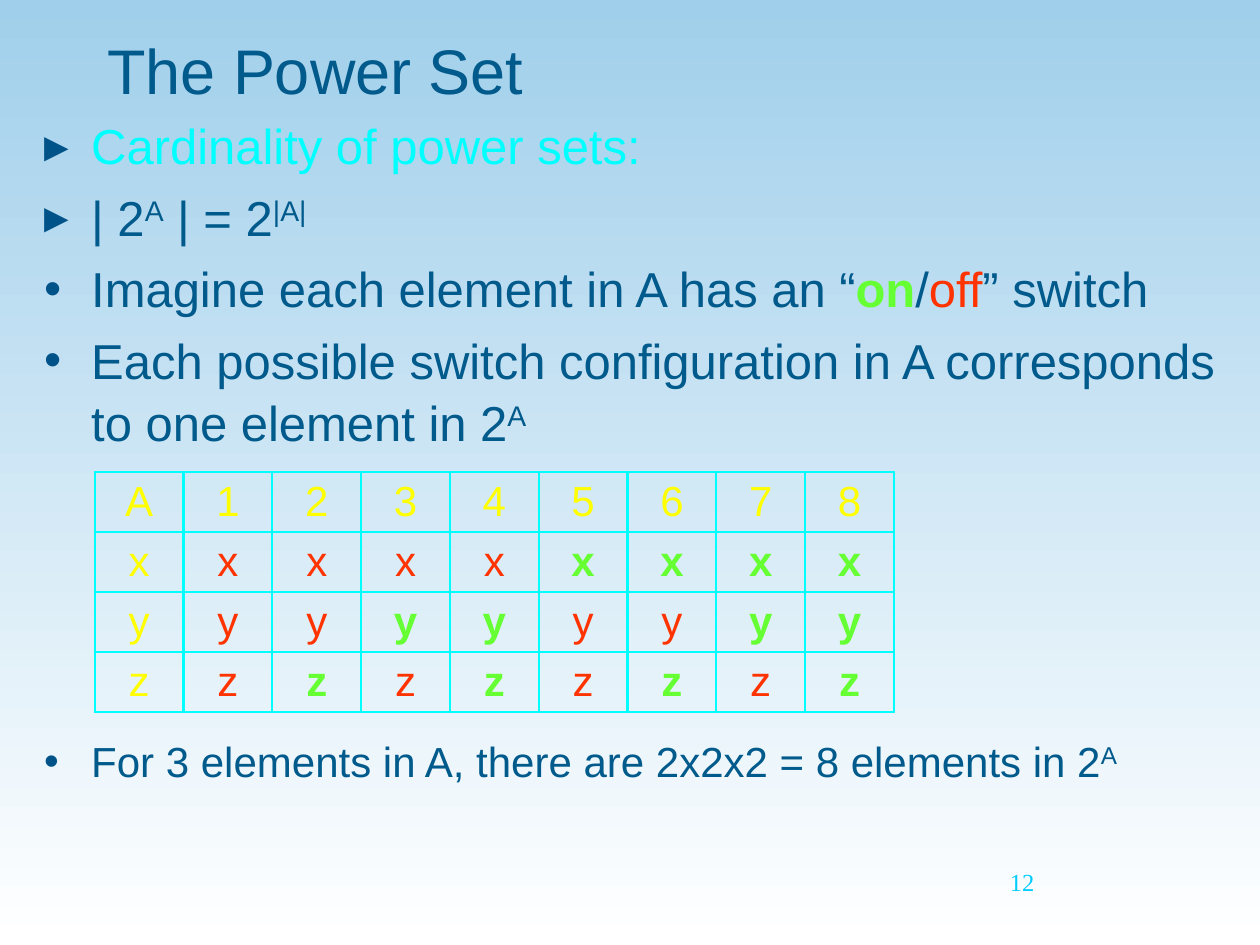
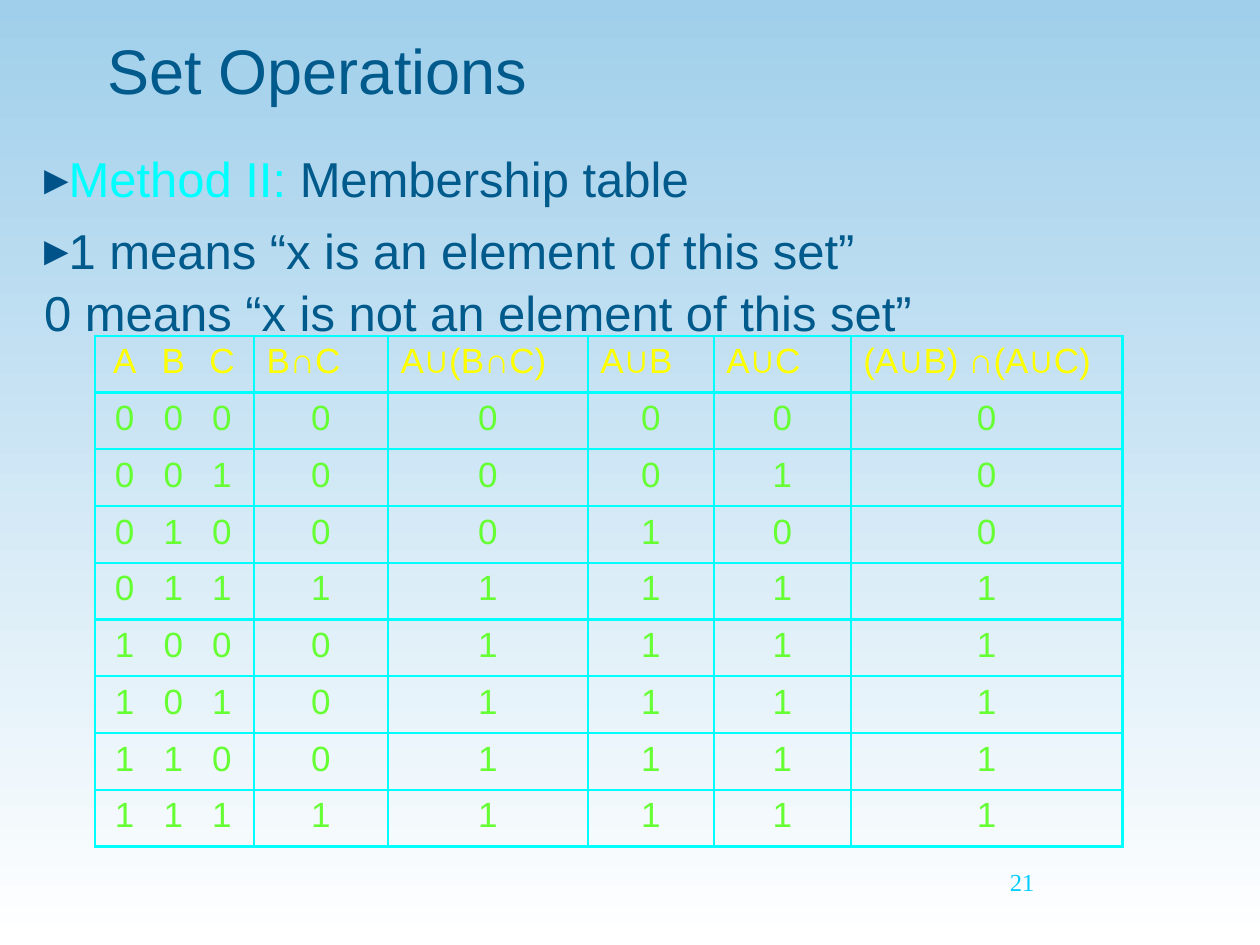
import itertools

import pptx
import pptx.dml.color
import pptx.enum.text
import pptx.oxml
import pptx.oxml.ns
import pptx.util
from pptx.util import Cm, Pt

COLORS = {"sky": "A0CFEB", "white": "FFFFFF", "text": "005A8B", "bullet": "005389",
          "cyan": "00FFFF", "number": "00CCFF", "yellow": "FFFF00",
          "on": "66FF33", "off": "FF3300"}
BODY_FONT, NUMBER_FONT = "Arial", "Times New Roman"
LEFT, MIDDLE, TOP = (pptx.enum.text.PP_ALIGN.LEFT, pptx.enum.text.MSO_ANCHOR.MIDDLE,
                     pptx.enum.text.MSO_ANCHOR.TOP)
CENTER = pptx.enum.text.PP_ALIGN.CENTER

# Content: a paragraph is (bullet, parts); a part is (text, style)
POWER_SET = [
    ("▸", [("Cardinality of power sets:", "cyan")]),
    ("▸", [("| 2", "text"), ("A", "super"), (" | = 2", "text"), ("|A|", "super")]),
    ("•", [("Imagine each element in A has an “", "text"), ("on", "on"),
           ("/", "text"), ("off", "off"), ("” switch", "text")]),
    ("•", [("Each possible switch configuration in A corresponds to one element in 2",
            "text"), ("A", "super")]),
]
POWER_SET_SIZE = [
    ("•", [("For 3 elements in A, there are 2x2x2 = 8 elements in 2", "text"),
           ("A", "super")]),
]
METHOD = [
    ("▸", [("Method II: ", "cyan"), ("Membership table", "text")]),
    ("▸", [("1 means “x is an element of this set”", "text"), ("\n", "text"),
           ("0 means “x is not an element of this set”", "text")]),
]
ELEMENTS = "xyz"
MEMBERSHIP_HEADS = ["\tA\tB\tC", "B∩C", "A∪(B∩C)", "A∪B", "A∪C", "(A∪B) ∩(A∪C)"]
MEMBERSHIP_WIDTHS = [3.21, 2.7, 4.03, 2.54, 2.76, 5.48]
MEMBERSHIP_TABS = [0.35, 1.33, 2.31]
TABLE_LEFT = 1.91


def rgb(name):
    return pptx.dml.color.RGBColor.from_string(COLORS[name])


def style(r, size, color, font=BODY_FONT, bold=False):
    r.font.size, r.font.name, r.font.bold = Pt(size), font, bold
    r.font.color.rgb = rgb(color)


def append_xml(parent, xml, index=None):
    ns = pptx.oxml.ns.nsdecls("a")
    el = pptx.oxml.parse_xml(xml.replace(" ", f" {ns} ", 1))
    parent.insert(len(parent) if index is None else index, el)


def text_box(s, left, top, width, height, anchor=TOP):
    tf = s.shapes.add_textbox(Cm(left), Cm(top), Cm(width), Cm(height)).text_frame
    tf.word_wrap, tf.vertical_anchor = True, anchor
    return tf


def add_label(s, box, text, size, color, font, anchor=TOP):
    tf = text_box(s, *box, anchor)
    tf.text = text
    style(tf.paragraphs[0].runs[0], size, color, font)


def add_bullets(s, box, paragraphs, size, hang=0.0):
    tf = text_box(s, *box)
    for i, (bullet, parts) in enumerate(paragraphs):
        p = tf.add_paragraph() if i else tf.paragraphs[0]
        pPr = p._p.get_or_add_pPr()
        pPr.set("marL", str(Cm(hang)))
        pPr.set("indent", str(-Cm(hang)))
        append_xml(pPr, f'<a:buClr ><a:srgbClr val="{COLORS["bullet"]}"/></a:buClr>')
        append_xml(pPr, f'<a:buFont typeface="{BODY_FONT}"/>')
        append_xml(pPr, f'<a:buChar char="{bullet}"/>')
        p.line_spacing = 1.05
        p.space_before = Pt(0.2 * size if i else 0)
        for text, kind in parts:
            if text == "\n":
                p.add_line_break()
                continue
            r = p.add_run()
            r.text = text
            style(r, size, "text" if kind == "super" else kind, bold=kind == "on")
            if kind == "super":
                r.font._element.set("baseline", "30000")


def add_grid(s, top, height, widths, rows, size):
    """Each cell is (text, colour, bold, alignment)."""
    tbl = s.shapes.add_table(len(rows), len(widths), Cm(TABLE_LEFT), Cm(top),
                             Cm(sum(widths)), Cm(height)).table
    tbl.first_row = tbl.horz_banding = False
    for col, width in zip(tbl.columns, widths):
        col.width = Cm(width)
    for i, row in enumerate(rows):
        tbl.rows[i].height = Cm(height / len(rows))
        for j, (text, color, bold, align) in enumerate(row):
            cell = tbl.cell(i, j)
            cell.margin_top, cell.margin_bottom = Cm(0.13), Cm(0.06)
            cell.fill.background()
            for k, side in enumerate("LRTB"):
                append_xml(cell._tc.get_or_add_tcPr(),
                           f'<a:ln{side} w="{Pt(1.5)}"><a:solidFill><a:srgbClr '
                           f'val="{COLORS["cyan"]}"/></a:solidFill></a:ln{side}>', k)
            cell.text = text
            p = cell.text_frame.paragraphs[0]
            if "\t" in text:
                tabs = "".join(f'<a:tab pos="{Cm(pos)}" algn="ctr"/>'
                               for pos in MEMBERSHIP_TABS)
                append_xml(p._p.get_or_add_pPr(), f"<a:tabLst >{tabs}</a:tabLst>")
            p.alignment = align
            style(p.runs[0], size, color, bold=bold)


def new_slide(prs, title, number):
    s = prs.slides.add_slide(prs.slide_layouts[6])
    fill = s.background.fill
    fill.gradient()
    fill.gradient_angle = 270
    for stop, name in zip(fill.gradient_stops, ("sky", "white")):
        stop.color.rgb = rgb(name)
    add_label(s, (1.91, 0.45, 21.59, 1.9), title, 36, "text", BODY_FONT, MIDDLE)
    add_label(s, (20.11, 17.36, 5.08, 1.27), number, 14, "number", NUMBER_FONT)
    return s


def switch_rows():
    """One column per subset: the bits of its index switch the elements on."""
    n = len(ELEMENTS)
    rows = [[(h, "yellow", False, CENTER) for h in ["A", *map(str, range(1, 2**n + 1))]]]
    for i, name in enumerate(ELEMENTS):
        bits = [(k >> (n - 1 - i)) & 1 for k in range(2**n)]
        rows.append([(name, "yellow", False, CENTER)]
                    + [(name, "on" if b else "off", bool(b), CENTER) for b in bits])
    return rows


def membership_rows():
    rows = [[(h, "yellow", False, LEFT) for h in MEMBERSHIP_HEADS]]
    for a, b, c in itertools.product((0, 1), repeat=3):
        values = [b & c, a | (b & c), a | b, a | c, (a | b) & (a | c)]
        rows.append([(f"\t{a}\t{b}\t{c}", "on", False, LEFT)]
                    + [(str(v), "on", False, CENTER) for v in values])
    return rows


def main():
    prs = pptx.Presentation()
    prs.slide_width, prs.slide_height = Cm(25.4), Cm(19.05)

    # Power set
    s = new_slide(prs, "The Power Set", "12")
    add_bullets(s, (0.64, 2.15, 24.76, 6.99), POWER_SET, 28, 0.95)
    add_grid(s, 9.52, 4.8, [1.79] * 9, switch_rows(), 24)
    add_bullets(s, (0.64, 14.65, 23.92, 3.18), POWER_SET_SIZE, 24, 0.95)

    # Membership table
    s = new_slide(prs, "Set Operations", "21")
    add_bullets(s, (0.64, 2.82, 24.34, 3.8), METHOD, 28)
    add_grid(s, 6.77, 10.3, MEMBERSHIP_WIDTHS, membership_rows(), 20)

    prs.save("out.pptx")


if __name__ == "__main__":
    main()
